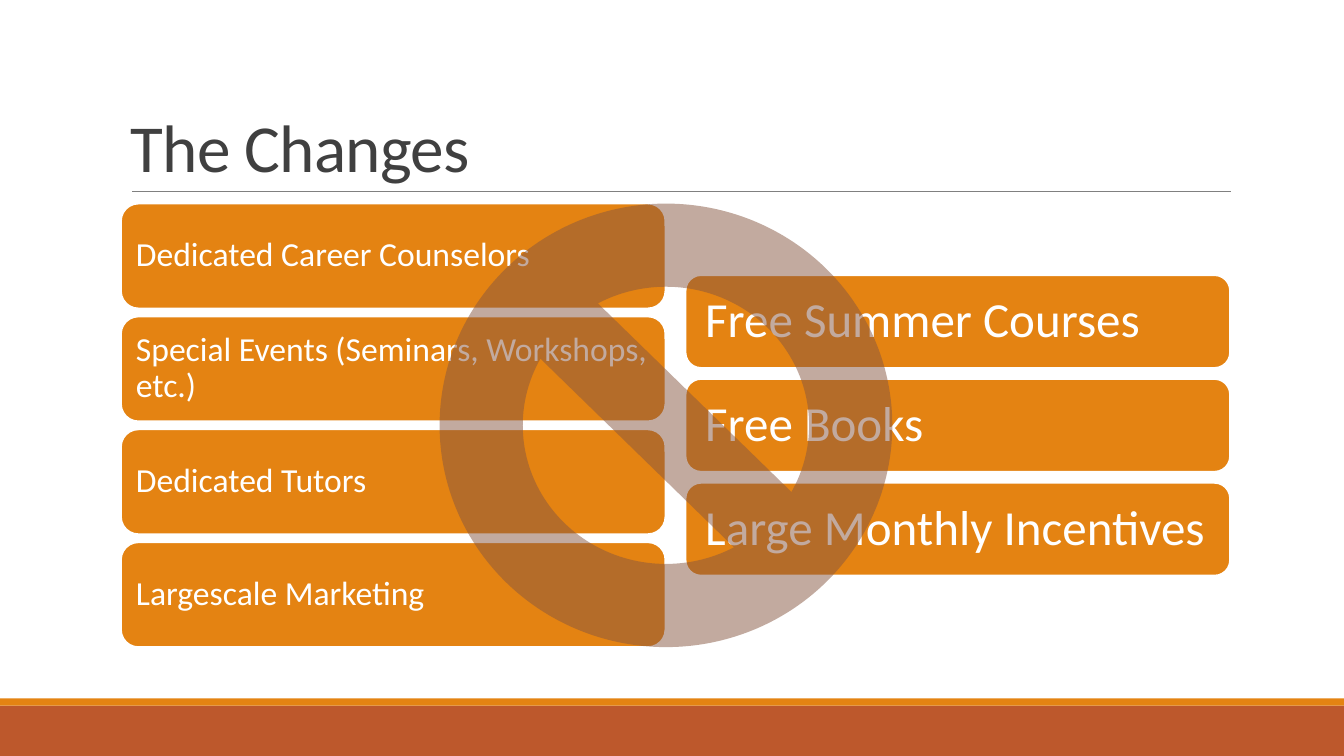
from lxml import etree
from pptx import Presentation
from pptx.dml.color import RGBColor
from pptx.enum.shapes import MSO_CONNECTOR, MSO_SHAPE
from pptx.enum.text import MSO_ANCHOR, PP_ALIGN
from pptx.oxml.ns import qn
from pptx.util import Inches, Pt

RECTANGLE = MSO_SHAPE.RECTANGLE
ROUNDED = MSO_SHAPE.ROUNDED_RECTANGLE
NO_SYMBOL = MSO_SHAPE.NO_SYMBOL
STRAIGHT = MSO_CONNECTOR.STRAIGHT
MIDDLE, BOTTOM = MSO_ANCHOR.MIDDLE, MSO_ANCHOR.BOTTOM
LEFT = PP_ALIGN.LEFT

COLOURS = {
    "orange": "E48312",
    "rust": "BD582C",
    "brown": "865640",
    "rule": "808080",
    "title": "404040",
    "white": "FFFFFF",
}


class SlideBuilder:
    """Holds the style and the current slide."""

    font_name = "Calibri"

    def __init__(self, slide):
        self.slide = slide

    def colour(self, name):
        return RGBColor.from_string(COLOURS[name])

    def shape(self, kind, place, fill, outline=None, opacity=None):
        shape = self.slide.shapes.add_shape(kind, *map(Inches, place))
        shape.shadow.inherit = False
        shape.fill.solid()
        shape.fill.fore_color.rgb = self.colour(fill)
        if outline:
            shape.line.color.rgb = self.colour(outline)
            shape.line.width = Pt(1.25)
        else:
            shape.line.fill.background()
        if opacity is not None:
            fill_colour = shape._element.spPr.find(qn("a:solidFill")).find(qn("a:srgbClr"))
            alpha = etree.SubElement(fill_colour, qn("a:alpha"))
            alpha.set("val", str(opacity * 1000))
        return shape

    def rule(self, left, right, top):
        ends = map(Inches, (left, top, right, top))
        line = self.slide.shapes.add_connector(STRAIGHT, *ends)
        line.line.color.rgb = self.colour("rule")
        line.line.width = Pt(0.5)
        etree.SubElement(line._element.spPr, qn("a:effectLst"))

    def add_text(self, frame, text, size, colour, anchor, spacing, inset):
        side, end = map(Inches, inset)
        frame_format = {
            "word_wrap": True,
            "vertical_anchor": anchor,
            "margin_left": side,
            "margin_right": side,
            "margin_top": end,
            "margin_bottom": end,
        }
        for name, value in frame_format.items():
            setattr(frame, name, value)
        para = frame.paragraphs[0]
        para.alignment = LEFT
        para.line_spacing = spacing
        span = para.add_run()
        span.text = text
        for name, value in {"name": self.font_name, "size": Pt(size)}.items():
            setattr(span.font, name, value)
        span.font.color.rgb = self.colour(colour)
        return span

    def title(self, text, place):
        box = self.slide.shapes.add_textbox(*map(Inches, place))
        span = self.add_text(box.text_frame, text, 48, "title", BOTTOM, 0.85, (0.1, 0.05))
        span._r.get_or_add_rPr().set("spc", "-50")

    def card_column(self, labels, left, top, height, pitch, size, inset):
        for index, label in enumerate(labels):
            place = (left, top + index * pitch, 5.4, height)
            card = self.shape(ROUNDED, place, "orange", outline="white")
            self.add_text(card.text_frame, label, size, "white", MIDDLE, 0.9, (inset, inset))


def main():
    deck = Presentation()
    deck.slide_width, deck.slide_height = Inches(13.33), Inches(7.5)
    page = SlideBuilder(deck.slides.add_slide(deck.slide_layouts[6]))

    # Footer bands and title
    page.shape(RECTANGLE, (0, 7, 13.33, 0.5), "rust")
    page.shape(RECTANGLE, (0, 6.93, 13.33, 0.07), "orange")
    page.rule(1.31, 12.21, 1.9)
    page.title("The Changes", (1.2, 0.31, 11, 1.59))

    # Two columns of changes
    services = [
        "Dedicated Career Counselors",
        "Special Events (Seminars, Workshops, etc.)",
        "Dedicated Tutors",
        "Largescale Marketing",
    ]
    benefits = ["Free Summer Courses", "Free Books", "Large Monthly Incentives"]
    page.card_column(services, 1.2, 2.02, 1.04, 1.12, 24, 0.1)
    page.card_column(benefits, 6.8, 2.73, 0.92, 1.03, 35, 0.15)

    # Translucent prohibition sign
    page.shape(NO_SYMBOL, (4.36, 2.02, 4.49, 4.4), "brown", opacity=50)

    deck.save("out.pptx")


if __name__ == "__main__":
    main()
